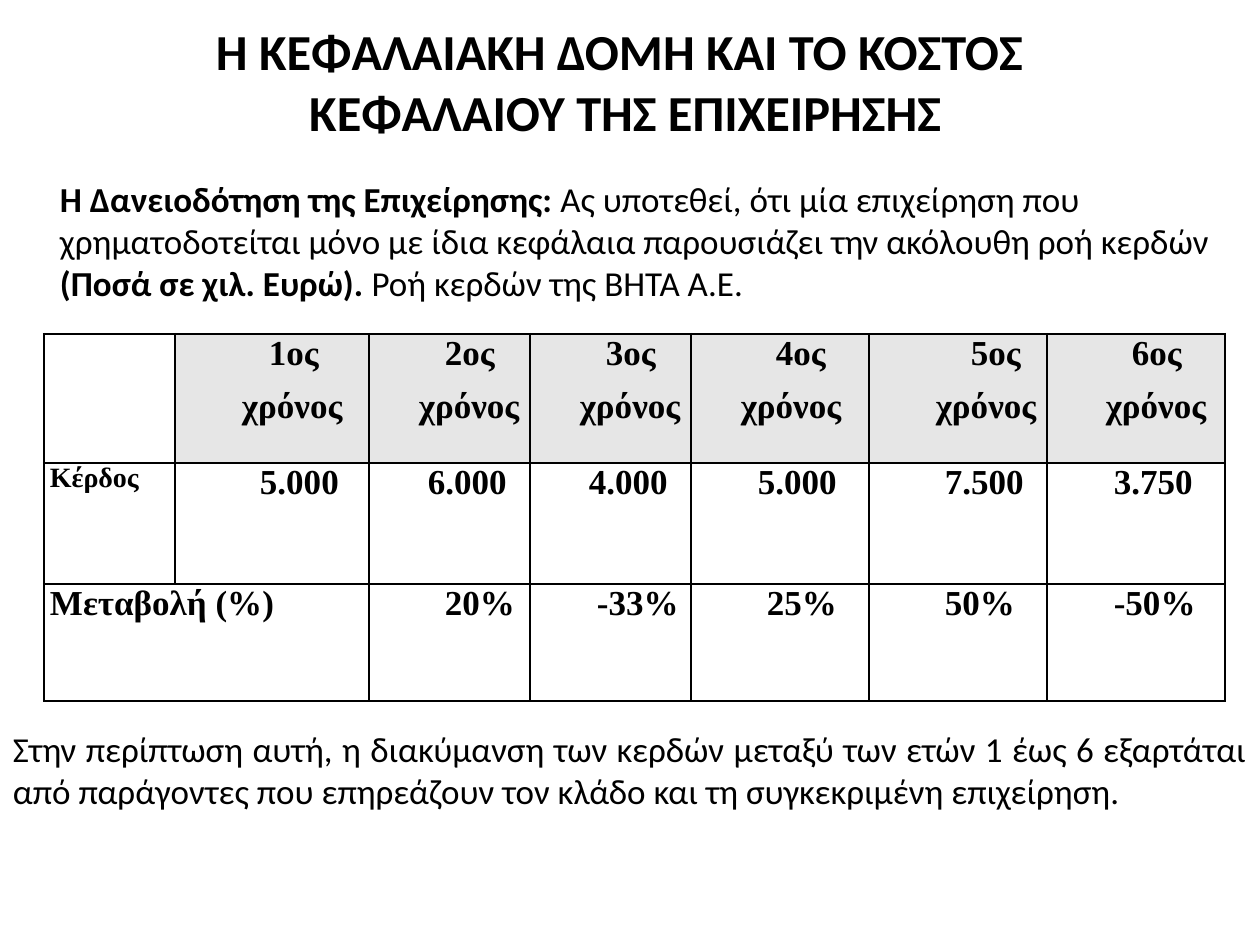
"""Build the slide on capital structure with its table of yearly profits."""
from lxml import etree
from pptx import Presentation
from pptx.dml.color import RGBColor
from pptx.enum.text import MSO_ANCHOR, PP_ALIGN
from pptx.oxml.ns import qn
from pptx.util import Pt

PX = 914400 // 126
BLACK = RGBColor(0x00, 0x00, 0x00)
GREY = RGBColor(0xE6, 0xE6, 0xE6)
CENTER, JUSTIFY, LEFT = PP_ALIGN.CENTER, PP_ALIGN.JUSTIFY, PP_ALIGN.LEFT
MIDDLE, TOP = MSO_ANCHOR.MIDDLE, MSO_ANCHOR.TOP
BODY, SERIF = "Calibri", "Times New Roman"

TITLE = [[("Η ΚΕΦΑΛΑΙΑΚΗ ΔΟΜΗ ΚΑΙ ΤΟ ΚΟΣΤΟΣ \vΚΕΦΑΛΑΙΟΥ ΤΗΣ ΕΠΙΧΕΙΡΗΣΗΣ", True)]]
INTRO = [
    [("Η Δανειοδότηση της Επιχείρησης: ", True), ("Ας υποτεθεί, ότι μία επιχείρηση που", False)],
    [("χρηματοδοτείται μόνο με ίδια κεφάλαια παρουσιάζει την ακόλουθη ροή κερδών", False)],
    [("(Ποσά σε χιλ. Ευρώ). ", True), ("Ροή κερδών της ΒΗΤΑ Α.Ε.", False)],
]
CONCLUSION = [[("Στην περίπτωση αυτή, η διακύμανση των κερδών μεταξύ των ετών 1 έως 6 εξαρτάται "
                "από παράγοντες που επηρεάζουν τον κλάδο και τη συγκεκριμένη επιχείρηση.", False)]]

YEAR = "χρόνος"
PROFITS = [
    [[], [("1ος", 88), (YEAR, 61)], [("2ος", 70), (YEAR, 44)], [("3ος", 70), (YEAR, 44)],
     [("4ος", 79), (YEAR, 44)], [("5ος", 96), (YEAR, 61)], [("6ος", 79), (YEAR, 53)]],
    [[("Κέρδος", 0)], [("5.000", 79)], [("6.000", 53)], [("4.000", 53)],
     [("5.000", 61)], [("7.500", 70)], [("3.750", 61)]],
    [[("Μεταβολή (%)", 0)], [], [("20%", 70)], [("-33%", 61)],
     [("25%", 70)], [("50%", 70)], [("-50%", 61)]],
]
COLUMN_WIDTHS = [131, 194, 161, 161, 178, 178, 178]
ROW_HEIGHTS = [129, 121, 117]
THICK_INNER = {(1, 0, "R"), (1, 1, "L"), (1, 1, "B"), (2, 0, "R"), (2, 1, "R"), (2, 2, "L")}


def style_font(font, name, size, bold):
    font.name, font.size, font.bold = name, Pt(size), bold
    font.color.rgb = BLACK


def add_text(slide, box, paragraphs, size, align, anchor, side_margin, end_margin):
    frame = slide.shapes.add_textbox(*(n * PX for n in box)).text_frame
    frame.word_wrap, frame.vertical_anchor = True, anchor
    frame.margin_left, frame.margin_right = side_margin * PX, end_margin * PX
    for index, pieces in enumerate(paragraphs):
        paragraph = frame.paragraphs[0] if index == 0 else frame.add_paragraph()
        paragraph.alignment = align
        style_font(paragraph.font, BODY, size, pieces[0][1])
        if len(pieces) == 1:
            paragraph.text = pieces[0][0]
            continue
        for words, bold in pieces:
            run = paragraph.add_run()
            run.text, run.font.bold = words, bold


def border_width(row, column, side):
    outer = (row == 2 and side == "B" or column == 0 and side == "L"
             or column == 6 and side == "R")
    header = row == 0 or row == 1 and side == "T"
    return 1.5 if outer or header or (row, column, side) in THICK_INNER else 1


def set_borders(cell, row, column):
    properties = cell._tc.get_or_add_tcPr()
    for index, side in enumerate("LRTB"):
        width = str(int(Pt(border_width(row, column, side))))
        line = etree.Element(qn(f"a:ln{side}"), w=width)
        fill = etree.SubElement(line, qn("a:solidFill"))
        etree.SubElement(fill, qn("a:srgbClr"), val=str(BLACK))
        properties.insert(index, line)


def fill_cell(cell, row, column, lines):
    cell.margin_left = cell.margin_right = 6 * PX
    cell.margin_top = cell.margin_bottom = 0
    if row == 0 and column > 0:
        cell.fill.solid()
        cell.fill.fore_color.rgb = GREY
    else:
        cell.fill.background()
    for index, (words, indent) in enumerate(lines):
        frame = cell.text_frame
        paragraph = frame.paragraphs[0] if index == 0 else frame.add_paragraph()
        paragraph.text = words
        paragraph.space_before = Pt(4 if row == 0 else 12)
        paragraph.space_after = Pt(4 if row == 0 else 0)
        style_font(paragraph.font, SERIF, 16 if (row, column) == (1, 0) else 20, True)
        if indent:
            paragraph._p.get_or_add_pPr().set("marL", str(indent * PX))
    set_borders(cell, row, column)


def add_profit_table(slide):
    box = (44, 334, sum(COLUMN_WIDTHS), sum(ROW_HEIGHTS))
    table = slide.shapes.add_table(len(ROW_HEIGHTS), len(COLUMN_WIDTHS),
                                   *(n * PX for n in box)).table
    table.first_row = table.horz_banding = False
    for column, width in zip(table.columns, COLUMN_WIDTHS):
        column.width = width * PX
    for row, height in zip(table.rows, ROW_HEIGHTS):
        row.height = height * PX
    table.cell(2, 0).merge(table.cell(2, 1))
    for row, cells in enumerate(PROFITS):
        for column, lines in enumerate(cells):
            fill_cell(table.cell(row, column), row, column, lines)


def main():
    deck = Presentation()
    deck.slide_width, deck.slide_height = 1260 * PX, 945 * PX
    slide = deck.slides.add_slide(deck.slide_layouts[6])
    add_text(slide, (25, 26, 1201, 110), TITLE, 28.8, CENTER, MIDDLE, 13, 13)
    add_profit_table(slide)
    add_text(slide, (0, 155, 1260, 170), INTRO, 20, LEFT, MIDDLE, 60, 0)
    add_text(slide, (0, 721, 1260, 140), CONCLUSION, 20, JUSTIFY, TOP, 13, 13)
    deck.save("out.pptx")


if __name__ == "__main__":
    main()
